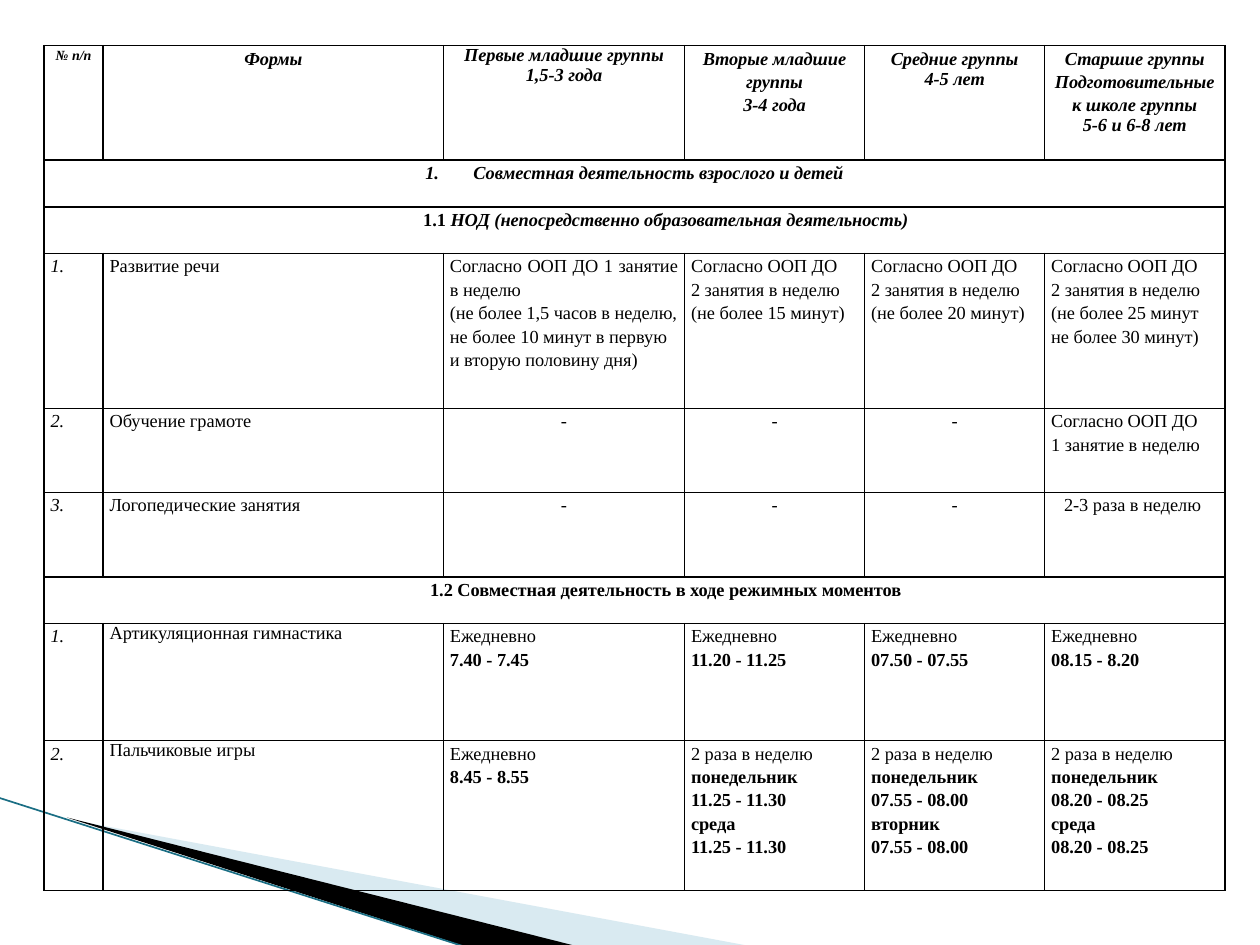
from lxml import etree
from pptx import Presentation
from pptx.dml.color import RGBColor
from pptx.enum.shapes import MSO_CONNECTOR
from pptx.enum.text import PP_ALIGN
from pptx.oxml import parse_xml
from pptx.oxml.ns import nsdecls, qn
from pptx.util import Cm, Pt

LEFT, CENTER, JUST = PP_ALIGN.LEFT, PP_ALIGN.CENTER, PP_ALIGN.JUSTIFY
STRAIGHT = MSO_CONNECTOR.STRAIGHT
BLACK = RGBColor(0, 0, 0)
PALE = RGBColor(0xA0, 0xCB, 0xDC)
TEAL = RGBColor(0x1A, 0x6E, 0x84)
FONT = "Times New Roman"

# Content: a cell is a list of paragraphs, "*" marks a bold one
HEAD = [
    ["№ п/п"],
    ["Формы"],
    ["Первые младшие группы", "1,5-3 года"],
    ["Вторые младшие группы", "3-4 года"],
    ["Средние группы", "4-5 лет"],
    ["Старшие группы", "Подготовительные к школе группы", "5-6 и 6-8 лет"],
]
PLAN = "Согласно ООП ДО"
TWICE = "2 занятия в неделю"
DAILY = "Ежедневно"
PAIR = "2 раза в неделю"
ROWS = {
    3: [["1."], ["Развитие речи"],
        [PLAN + " 1 занятие в неделю",
         "(не более 1,5 часов в неделю, не более 10 минут в первую "
         "и вторую половину дня)"],
        [PLAN, TWICE, "(не более 15 минут)"],
        [PLAN, TWICE, "(не более 20 минут)"],
        [PLAN, TWICE, "(не более 25 минут", "не более 30 минут)"]],
    4: [["2."], ["Обучение грамоте"], ["-"], ["-"], ["-"],
        [PLAN, "1 занятие в неделю"]],
    5: [["3."], ["Логопедические занятия"], ["-"], ["-"], ["-"],
        ["2-3 раза в неделю"]],
    7: [["1."], ["Артикуляционная гимнастика"],
        [DAILY, "*7.40 - 7.45"], [DAILY, "*11.20 - 11.25"],
        [DAILY, "*07.50 - 07.55"], [DAILY, "*08.15 - 8.20"]],
    8: [["2."], ["Пальчиковые игры"],
        [DAILY, "*8.45 - 8.55"],
        [PAIR, "*понедельник", "*11.25 - 11.30", "*среда", "*11.25 - 11.30"],
        [PAIR, "*понедельник", "*07.55 - 08.00", "*вторник", "*07.55 - 08.00"],
        [PAIR, "*понедельник", "*08.20 - 08.25", "*среда", "*08.20 - 08.25"]],
}
# Band rows: runs as (text, italic), left margin, first indent, numbered
BANDS = {
    1: ([("Совместная деятельность взрослого и детей", True)],
        0.97, -0.97, True),
    2: ([("1.1 ", False),
         ("НОД (непосредственно образовательная деятельность)", True)],
        2.06, -0.79, False),
    6: ([("1.2 Совместная деятельность в ходе режимных моментов", False)],
        1.27, 0, False),
}
# Paragraphs with single line spacing
TIGHT = {"Первые младшие группы", "1,5-3 года", "4-5 лет", "5-6 и 6-8 лет",
         "Артикуляционная гимнастика", "Пальчиковые игры"}
WIDTHS = [1.19, 6.86, 4.86, 3.63, 3.63, 3.63]
HEIGHTS = [2.31, 0.94, 0.94, 3.12, 1.7, 1.7, 0.94, 2.36, 3.02]

# Corner wedges in cm
WEDGES = [
    ([(1.4, 16.52), (15.11, 19.07), (11.58, 19.07)], PALE, 40),
    ([(1.35, 16.48), (11.61, 19.07), (9.45, 19.1)], BLACK, 100),
]


def wedge(shapes, points, color, alpha):
    points = [(Cm(x), Cm(y)) for x, y in points]
    pen = shapes.build_freeform(*points[0])
    pen.add_line_segments(points[1:], close=True)
    shape = pen.convert_to_shape()
    shape.shadow.inherit = False
    shape.line.fill.background()
    shape.fill.solid()
    shape.fill.fore_color.rgb = color
    if alpha < 100:
        tone = shape.fill._xPr.find(".//" + qn("a:srgbClr"))
        etree.SubElement(tone, qn("a:alpha")).set("val", str(alpha * 1000))


def frame(cell):
    cell.margin_left = cell.margin_right = Cm(0.13)
    cell.margin_top = cell.margin_bottom = 0
    props = cell._tc.get_or_add_tcPr()
    for side in "LRTB":
        props.append(parse_xml(
            f'<a:ln{side} {nsdecls("a")} w="12700"><a:solidFill>'
            f'<a:srgbClr val="{BLACK}"/></a:solidFill></a:ln{side}>'))
    cell.fill.background()


def style(para, align, bold=False, italic=False, size=10.5, space=1.15):
    para.alignment = align
    para.line_spacing = space
    font = para.font
    font.name, font.size, font.color.rgb = FONT, Pt(size), BLACK
    font.bold, font.italic = bold, italic


def indent(para, left, first):
    props = para._p.get_or_add_pPr()
    props.set("marL", str(Cm(left)))
    props.set("indent", str(Cm(first)))
    return props


def write(cell, lines, row, col):
    head = row == 0
    for i, line in enumerate(lines):
        para = cell.text_frame.paragraphs[0] if i == 0 \
            else cell.text_frame.add_paragraph()
        text = line.lstrip("*")
        para.text = text
        if head or text == "-":
            align = CENTER
        else:
            align = LEFT if "не более" in text else JUST
        if text.startswith("2-3"):
            indent(para, 0.74, -0.48)
        style(para, align, head or line != text, head or col == 0,
              8 if head and col == 0 else 10.5,
              0.98 if text in TIGHT else 1.15)


def band(cell, runs, left, first, numbered):
    para = cell.text_frame.paragraphs[0]
    props = indent(para, left, first)
    if numbered:
        etree.SubElement(props, qn("a:buFont")).set("typeface", "+mj-lt")
        etree.SubElement(props, qn("a:buAutoNum")).set("type", "arabicPeriod")
    style(para, CENTER, bold=True)
    for text, italic in runs:
        run = para.add_run()
        run.text = text
        run.font.italic = italic


def main():
    prs = Presentation()
    prs.slide_width, prs.slide_height = Cm(25.4), Cm(19.05)
    shapes = prs.slides.add_slide(prs.slide_layouts[6]).shapes

    # Corner decoration
    for item in WEDGES:
        wedge(shapes, *item)
    edge = shapes.add_connector(STRAIGHT, Cm(-0.03), Cm(16.08),
                                Cm(9.42), Cm(19.1))
    edge.line.color.rgb, edge.line.width = TEAL, Pt(0.95)
    etree.SubElement(edge._element.spPr, qn("a:effectLst"))

    # Schedule table
    table = shapes.add_table(len(HEIGHTS), len(WIDTHS), Cm(0.89), Cm(0.92),
                             Cm(sum(WIDTHS)), Cm(sum(HEIGHTS))).table
    table.first_row = table.horz_banding = False
    for col, width in zip(table.columns, WIDTHS):
        col.width = Cm(width)
    for row, height in zip(table.rows, HEIGHTS):
        row.height = Cm(height)
    for cell in table.iter_cells():
        frame(cell)
    for r, cells in {0: HEAD, **ROWS}.items():
        for c, lines in enumerate(cells):
            write(table.cell(r, c), lines, r, c)
    for r, spec in BANDS.items():
        table.cell(r, 0).merge(table.cell(r, len(WIDTHS) - 1))
        band(table.cell(r, 0), *spec)

    prs.save("out.pptx")


if __name__ == "__main__":
    main()
